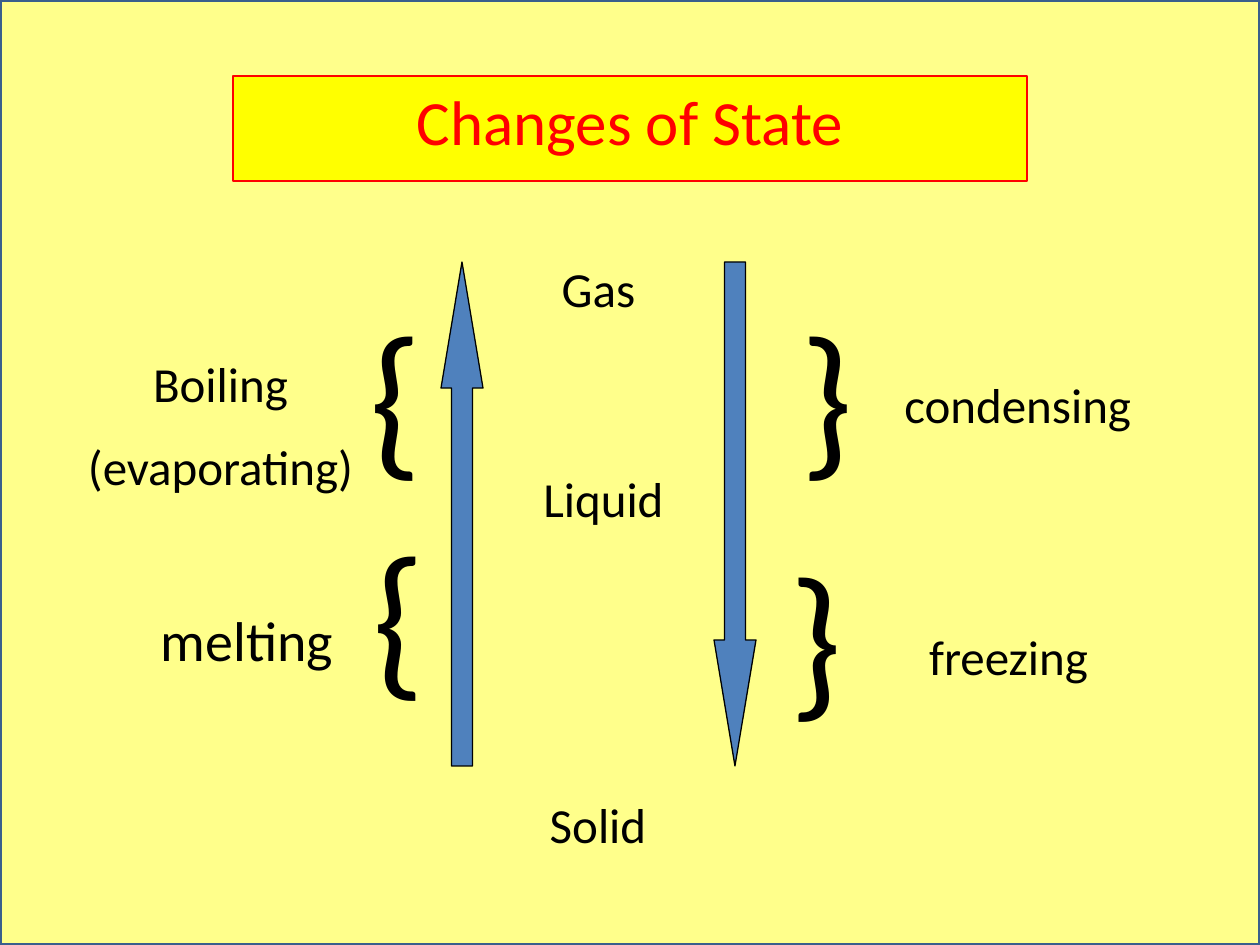
from pptx import Presentation
from pptx.dml.color import RGBColor
from pptx.enum.shapes import MSO_SHAPE
from pptx.enum.text import MSO_ANCHOR, MSO_AUTO_SIZE, PP_ALIGN
from pptx.util import Emu, Pt

RECT = MSO_SHAPE.RECTANGLE
UP, DOWN = MSO_SHAPE.UP_ARROW, MSO_SHAPE.DOWN_ARROW
LEFT, CENTER = PP_ALIGN.LEFT, PP_ALIGN.CENTER
TOP = MSO_ANCHOR.TOP
FIT_SHAPE = MSO_AUTO_SIZE.SHAPE_TO_FIT_TEXT
TITLE_ONLY = 5
EMU_PER_PX = 914400 / 126


def px(n):
    return Emu(round(n * EMU_PER_PX))


def rgb(value):
    return RGBColor.from_string(value)


class Deck:
    font = "Calibri"
    ink = "000000"

    def __init__(self, prs):
        self.s = prs.slides.add_slide(prs.slide_layouts[TITLE_ONLY])

    def background(self, color):
        fill = self.s.background.fill
        fill.solid()
        fill.fore_color.rgb = rgb(color)

    def paint(self, sp, fill, line, width):
        sp.fill.solid()
        sp.fill.fore_color.rgb = rgb(fill)
        sp.line.color.rgb = rgb(line)
        sp.line.width = Pt(width)

    def shape(self, kind, box, fill, line, width):
        sp = self.s.shapes.add_shape(kind, *map(px, box))
        sp.shadow.inherit = False
        self.paint(sp, fill, line, width)
        return sp

    def arrow(self, kind, box):
        sp = self.shape(kind, box, "4F81BD", self.ink, 0.75)
        sp.adjustments[0] = 0.5
        sp.adjustments[1] = 3

    def set_text(self, sp, text, size, color, align):
        tf = sp.text_frame
        tf.text = text
        tf.word_wrap = True
        tf.auto_size = FIT_SHAPE
        tf.vertical_anchor = TOP
        for i, p in enumerate(tf.paragraphs):
            p.alignment = align
            p.space_before = Pt(size / 2 if i else 0)
            for r in p.runs:
                r.font.name = self.font
                r.font.size = Pt(size)
                r.font.color.rgb = rgb(color)

    def text(self, text, box, size=28, align=CENTER):
        sp = self.s.shapes.add_textbox(*map(px, box))
        self.set_text(sp, text, size, self.ink, align)

    def title(self, text, box):
        sp = self.s.shapes.title
        sp.left, sp.top, sp.width, sp.height = map(px, box)
        self.paint(sp, "FFFF00", "FF0000", 0.75)
        self.set_text(sp, text, 36, "FF0000", CENTER)
        sp.element.getparent().append(sp.element)


def main():
    prs = Presentation()
    prs.slide_width, prs.slide_height = px(1260), px(945)
    deck = Deck(prs)
    deck.background("FFFF99")
    deck.shape(RECT, (0, 0, 1260, 945), "FFFF8B", "3A5F8C", 2)

    for kind, left in ((UP, 441), (DOWN, 714)):
        deck.arrow(kind, (left, 262, 42, 504))

    for state, left, top, width in (
        ("Solid ", 514, 788, 179),
        ("Liquid ", 525, 462, 168),
        ("Gas ", 525, 252, 158),
    ):
        deck.text(state, (left, top, width, 72))

    for brace, left, top, width in (
        ("{", 360, 504, 71),
        ("{", 357, 284, 71),
        ("}", 788, 284, 95),
        ("}", 777, 525, 106),
    ):
        deck.text(brace, (left, top, width, 214), 96, LEFT)

    deck.text("melting", (126, 599, 242, 79), 32)
    deck.text("Boiling\n(evaporating)", (63, 347, 315, 160))
    deck.text("condensing", (892, 368, 284, 72), align=LEFT)
    deck.text("freezing", (872, 620, 273, 72))
    deck.title("Changes of State", (233, 76, 794, 89))
    prs.save("out.pptx")


if __name__ == "__main__":
    main()
